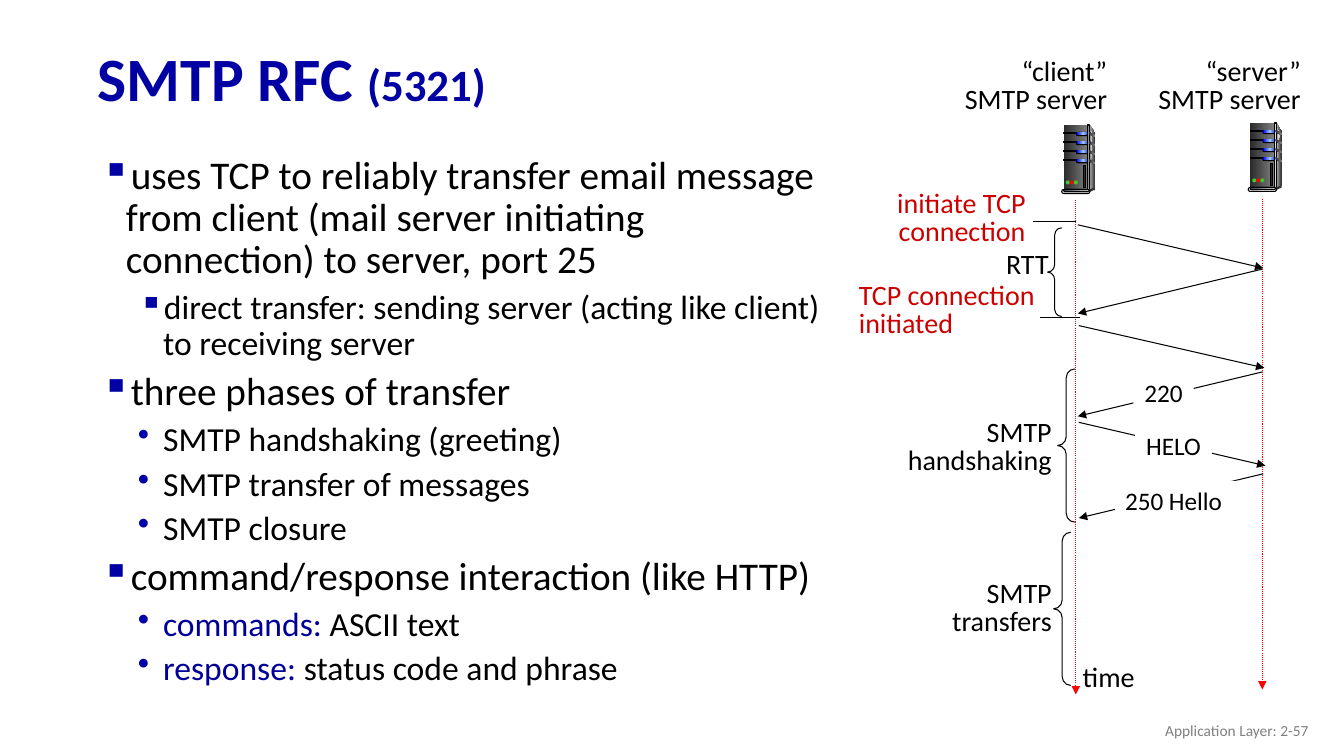
from dataclasses import dataclass
from typing import NamedTuple

from lxml import etree
from pptx import Presentation
from pptx.dml.color import RGBColor
from pptx.enum.dml import MSO_LINE
from pptx.enum.shapes import MSO_CONNECTOR, MSO_SHAPE
from pptx.enum.text import MSO_ANCHOR, MSO_AUTO_SIZE, PP_ALIGN
from pptx.oxml.ns import qn
from pptx.shapes.autoshape import Shape
from pptx.shapes.shapetree import GroupShapes, SlideShapes
from pptx.util import Emu, Pt

EMU_PER_PX = 9144  # 100 px to the inch
RECT, PILL, OVAL = MSO_SHAPE.RECTANGLE, MSO_SHAPE.ROUNDED_RECTANGLE, MSO_SHAPE.OVAL
BRACE = MSO_SHAPE.LEFT_BRACE
LEFT, CENTER, RIGHT = PP_ALIGN.LEFT, PP_ALIGN.CENTER, PP_ALIGN.RIGHT
TOP, MIDDLE = MSO_ANCHOR.TOP, MSO_ANCHOR.MIDDLE
STRAIGHT, DOTTED = MSO_CONNECTOR.STRAIGHT, MSO_LINE.ROUND_DOT

FONT = "Calibri"
BLACK, WHITE, RED, DARK_RED = "000000", "FFFFFF", "FF0000", "CC0000"
NAVY, TERM_BLUE, BULLET_BLUE = "0000A3", "000099", "0000A8"
GRAY, DARK, LIGHT, GREEN = "808080", "333333", "DDDDDD", "33CC33"
SHADE = ("292929", GRAY)
BLUE_GLOW = ("0000FF", "99CCFF", "0000FF")

Box = tuple[int, int, int, int]
Fill = str | tuple[str, ...] | None
Shapes = SlideShapes | GroupShapes


class Run(NamedTuple):
    text: str
    size: int = 20
    color: str = BLACK
    bold: bool = False


@dataclass
class Bullet:
    runs: list[Run]
    level: int = 0
    mark: str = "▪"
    color: str = NAVY


@dataclass
class Label:
    box: Box
    lines: list[str]
    color: str = BLACK
    align: PP_ALIGN = LEFT
    wrap: bool = True


class Line(NamedTuple):
    start: tuple[int, int]
    end: tuple[int, int]
    color: str = BLACK
    arrow: bool = True
    dotted: bool = False


def px(value: int) -> Emu:
    return Emu(value * EMU_PER_PX)


def rgb(color: str) -> RGBColor:
    return RGBColor.from_string(color)


def paint(shape: Shape, fill: Fill, line: str | None) -> None:
    """Set a plain fill, or a gradient with evenly spaced colours, and the outline."""
    shape.shadow.inherit = False
    if fill is None:
        shape.fill.background()
    elif isinstance(fill, str):
        shape.fill.solid()
        shape.fill.fore_color.rgb = rgb(fill)
    else:
        shape.fill.gradient()
        shape.fill.gradient_angle = 0
        stops = next(shape._element.iter(qn("a:gsLst")))
        for stop in list(stops):
            stops.remove(stop)
        for index, color in enumerate(fill):
            position = str(100000 * index // (len(fill) - 1))
            stop = etree.SubElement(stops, qn("a:gs"), pos=position)
            etree.SubElement(stop, qn("a:srgbClr"), val=color)
    if line is None:
        shape.line.fill.background()
    else:
        shape.line.color.rgb = rgb(line)
        shape.line.width = Pt(0.75)


def add_preset(shapes: Shapes, kind: MSO_SHAPE, box: Box, fill: Fill = None,
               line: str | None = None) -> Shape:
    shape = shapes.add_shape(kind, *map(px, box))
    if kind == PILL:
        shape.adjustments[0] = 0.5
    elif kind == BRACE:
        shape.adjustments[0] = 0.521
    paint(shape, fill, line)
    return shape


def add_outline(shapes: Shapes, points: list[tuple[int, int]], fill: Fill) -> None:
    builder = shapes.build_freeform(*points[0], scale=EMU_PER_PX)
    builder.add_line_segments(points[1:], close=True)
    paint(builder.convert_to_shape(), fill, None)


def add_line(shapes: Shapes, line: Line) -> None:
    connector = shapes.add_connector(STRAIGHT, *map(px, line.start + line.end))
    connector.line.color.rgb = rgb(line.color)
    connector.line.width = Pt(0.75)
    if line.dotted:
        connector.line.dash_style = DOTTED
    if line.arrow:
        etree.SubElement(connector.line._get_or_add_ln(), qn("a:tailEnd"), type="triangle")
    etree.SubElement(connector._element.spPr, qn("a:effectLst"))


def write_text(shape: Shape, paragraphs: list[list[Run]], *, align: PP_ALIGN = LEFT,
               anchor: MSO_ANCHOR = TOP, spacing: float = 1.0, wrap: bool = True,
               grow: bool = False) -> None:
    frame = shape.text_frame
    frame.word_wrap, frame.vertical_anchor = wrap, anchor
    frame.auto_size = MSO_AUTO_SIZE.SHAPE_TO_FIT_TEXT if grow else MSO_AUTO_SIZE.NONE
    for index, runs in enumerate(paragraphs):
        paragraph = frame.add_paragraph() if index else frame.paragraphs[0]
        paragraph.alignment, paragraph.line_spacing = align, spacing
        for item in runs:
            run = paragraph.add_run()
            run.text = item.text
            run.font.name, run.font.size = FONT, Pt(item.size)
            run.font.bold, run.font.color.rgb = item.bold, rgb(item.color)


def add_text(shapes: Shapes, box: Box, paragraphs: list[list[Run]], **text_format) -> Shape:
    shape = shapes.add_textbox(*map(px, box))
    write_text(shape, paragraphs, **text_format)
    return shape


def add_bullets(shapes: Shapes, box: Box, bullets: list[Bullet]) -> None:
    shape = add_text(shapes, box, [bullet.runs for bullet in bullets], spacing=0.9)
    for paragraph, bullet in zip(shape.text_frame.paragraphs, bullets):
        paragraph.level, paragraph.space_before = bullet.level, Pt(6)
        properties = paragraph._p.get_or_add_pPr()
        properties.set("marL", str(px(76 if bullet.level else 39)))
        properties.set("indent", str(px(-25 if bullet.mark == "•" else -24)))
        color = etree.SubElement(properties, qn("a:buClr"))
        etree.SubElement(color, qn("a:srgbClr"), val=bullet.color)
        etree.SubElement(properties, qn("a:buChar"), char=bullet.mark)


def add_server(shapes: Shapes, left: int, top: int) -> None:
    """Draw a tower server, its parts placed from its left and top."""
    parts = shapes.add_group_shape().shapes

    def part(kind: MSO_SHAPE, box: Box, fill: Fill, line: str | None = None) -> None:
        add_preset(parts, kind, (left + box[0], top + box[1], box[2], box[3]), fill, line)

    def panel(points: list[tuple[int, int]], fill: Fill) -> None:
        add_outline(parts, [(left + x, top + y) for x, y in points], fill)

    panel([(28, 0), (33, 8), (33, 62), (26, 65)], (LIGHT, DARK))
    part(RECT, (2, 0, 24, 65), SHADE)
    panel([(28, 4), (31, 9), (29, 35), (28, 64)], (GRAY, "F8F8F8"))
    for y in range(7, 35, 9):
        part(RECT, (2, y, 14, 1), BLACK, BLACK)
        part(PILL, (14, y, 14, 4), BLACK)
        part(PILL, (15, y, 13, 3), BLUE_GLOW)
    part(RECT, (26, 0, 2, 65), (DARK, LIGHT, DARK), BLACK)
    for y in range(7, 35, 9):
        panel([(27, y), (33, y + 3), (33, y + 5), (27, y + 2)], SHADE)
    part(OVAL, (32, 62, 1, 3), DARK)
    panel([(27, 64), (27, 67), (33, 64), (33, 62)], DARK)
    part(PILL, (0, 64, 28, 4), LIGHT, BLACK)
    part(PILL, (2, 64, 25, 2), ("44546A", "E7E6E6"), BLACK)
    for x, color in ((4, GREEN), (8, RED), (12, GREEN)):
        part(OVAL, (x, 55, 4, 4), color)
    part(RECT, (22, 40, 2, 22), "292929", BLACK)


def topic(text: str) -> Bullet:
    return Bullet([Run(text, 28)])


def detail(text: str, term: str = "") -> Bullet:
    runs = [Run(term, 24, TERM_BLUE)] if term else []
    return Bullet(runs + [Run(text, 24)], 1, "•", BULLET_BLUE)


BULLETS = [
    topic("uses TCP to reliably transfer email message from client "
          "(mail server initiating connection) to server, port 25"),
    Bullet([Run("direct transfer: sending server (acting like client) to receiving server", 24)], 1),
    topic("three phases of transfer"),
    detail("SMTP handshaking (greeting)"),
    detail("SMTP transfer of messages"),
    detail("SMTP closure"),
    topic("command/response interaction (like HTTP)"),
    detail(" ASCII text", "commands:"),
    detail(" status code and phrase", "response:"),
]
LINES = [
    Line((1067, 198), (1067, 689), RED, dotted=True),
    Line((1252, 197), (1252, 684), RED, dotted=True),
    Line((1069, 223), (1253, 266)), Line((1252, 267), (1069, 311)),
    Line((1070, 323), (1254, 365)), Line((1252, 369), (1069, 413)),
    Line((1070, 419), (1255, 462)), Line((1253, 470), (1070, 514)),
    Line((1025, 220), (1067, 220), arrow=False),
    Line((1032, 315), (1071, 315), arrow=False),
]
BRACES = [(1039, 226, 14, 88), (1049, 366, 17, 152), (1045, 528, 17, 152)]
MESSAGES = [("220", (1124, 369, 60, 40), CENTER), ("250 Hello", (1106, 477, 123, 40), LEFT),
            ("HELO", (1126, 422, 76, 40), CENTER)]
LABELS = [
    Label((878, 184, 149, 68), ["initiate TCP", "connection"], DARK_RED, RIGHT),
    Label((988, 245, 63, 39), ["RTT"], wrap=False),
    Label((1064, 654, 73, 39), ["time"], wrap=False),
    Label((871, 411, 182, 68), ["SMTP handshaking"], align=RIGHT),
    Label((842, 275, 240, 68), ["TCP connection", "initiated"], DARK_RED),
    Label((939, 53, 169, 68), ["“client”", "SMTP server"], align=RIGHT),
    Label((1131, 53, 169, 68), ["“server”", "SMTP server"], align=RIGHT),
    Label((871, 571, 182, 68), ["SMTP transfers"], align=RIGHT),
]


def main() -> None:
    presentation = Presentation()
    presentation.slide_width, presentation.slide_height = px(1333), px(750)
    shapes = presentation.slides.add_slide(presentation.slide_layouts[6]).shapes
    title = [Run("SMTP RFC ", 44, NAVY, True), Run("(5321)", 32, NAVY, True)]
    add_text(shapes, (87, 32, 1150, 98), [title], anchor=MIDDLE, spacing=0.9)
    add_bullets(shapes, (76, 149, 753, 508), BULLETS)
    for line in LINES:
        add_line(shapes, line)
    for box in BRACES:
        add_preset(shapes, BRACE, box, line=BLACK)
    add_server(shapes, 1238, 122)
    add_server(shapes, 1053, 124)
    for text, box, align in MESSAGES:
        message = add_preset(shapes, RECT, box, WHITE)
        write_text(message, [[Run(text, 18)]], align=align, grow=True)
    for label in LABELS:
        add_text(shapes, label.box, [[Run(text, color=label.color)] for text in label.lines],
                 align=label.align, spacing=0.85, wrap=label.wrap, grow=True)
    add_text(shapes, (1008, 705, 300, 40), [[Run("Application Layer: 2-57", 11, GRAY)]],
             align=RIGHT, anchor=MIDDLE)
    presentation.save("out.pptx")


if __name__ == "__main__":
    main()
